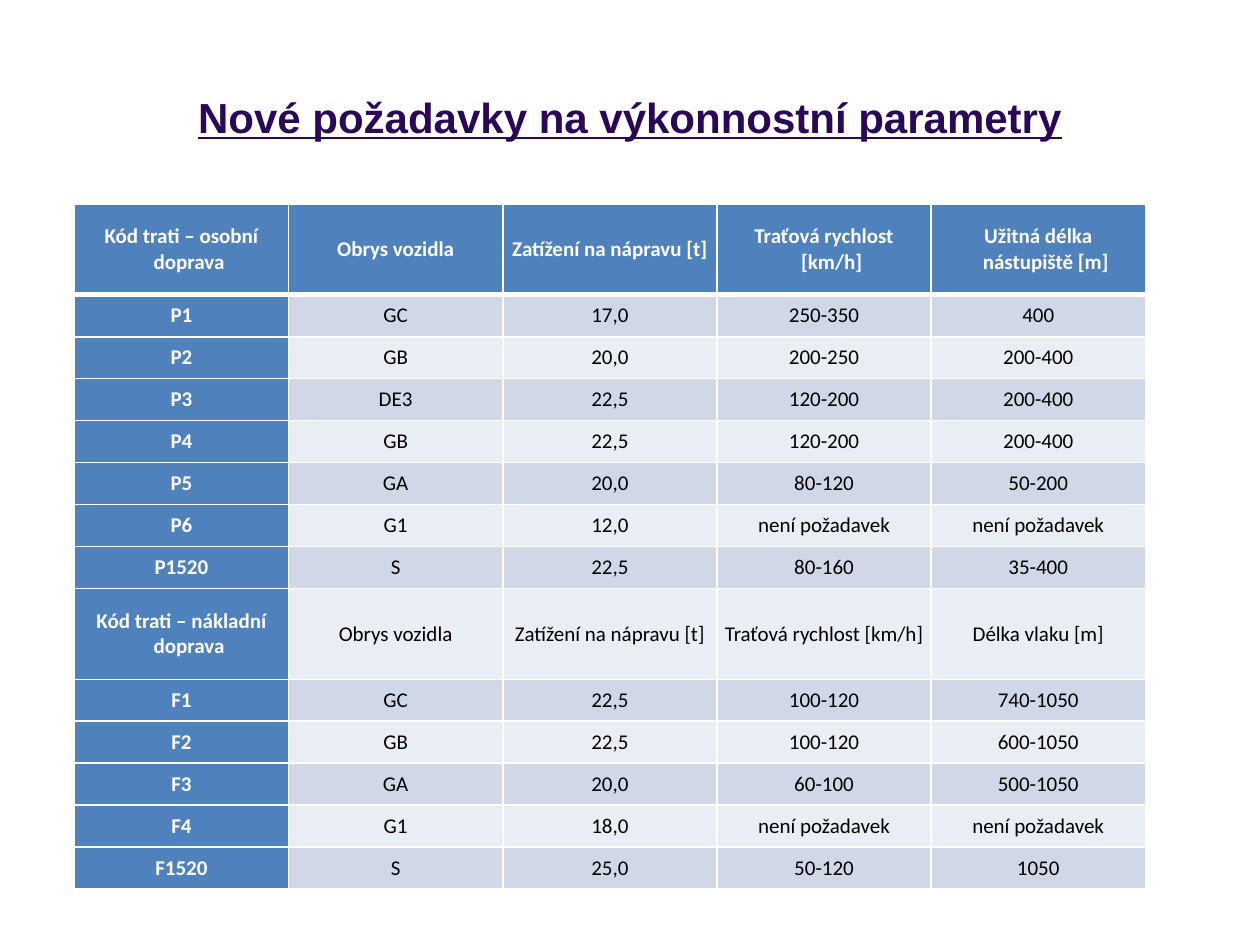
from lxml import etree
from pptx import Presentation
from pptx.dml.color import RGBColor
from pptx.enum.text import MSO_ANCHOR, PP_ALIGN
from pptx.oxml.ns import qn
from pptx.util import Inches, Pt

MID = MSO_ANCHOR.MIDDLE
CENTER = PP_ALIGN.CENTER

THEME = {
    "title": {"name": "Arial", "size": Pt(24), "bold": True, "underline": True},
    "head": {"name": "Calibri", "size": Pt(12), "bold": True},
    "body": {"name": "Calibri", "size": Pt(12), "bold": False},
    "ink": {"title": "2A0858", "head": "FFFFFF", "body": "000000"},
    "fill": {"head": "4F81BD", "odd": "D0D8E8", "even": "E9EDF4"},
    "line": "FFFFFF",
}

NONE = "není požadavek"
ROWS = [
    ("Kód trati – osobní doprava", "Obrys vozidla", "Zatížení na nápravu [t]",
     "Traťová rychlost [km/h]", "Užitná délka nástupiště [m]"),
    ("P1", "GC", "17,0", "250-350", "400"),
    ("P2", "GB", "20,0", "200-250", "200-400"),
    ("P3", "DE3", "22,5", "120-200", "200-400"),
    ("P4", "GB", "22,5", "120-200", "200-400"),
    ("P5", "GA", "20,0", "80-120", "50-200"),
    ("P6", "G1", "12,0", NONE, NONE),
    ("P1520", "S", "22,5", "80-160", "35-400"),
    ("Kód trati – nákladní doprava", "Obrys vozidla", "Zatížení na nápravu [t]",
     "Traťová rychlost [km/h]", "Délka vlaku [m]"),
    ("F1", "GC", "22,5", "100-120", "740-1050"),
    ("F2", "GB", "22,5", "100-120", "600-1050"),
    ("F3", "GA", "20,0", "60-100", "500-1050"),
    ("F4", "G1", "18,0", NONE, NONE),
    ("F1520", "S", "25,0", "50-120", "1050"),
]
TALL = (0, 8)


def write(frame, text, kind):
    para = frame.paragraphs[0]
    para.alignment = CENTER
    run = para.add_run()
    run.text = text
    for key, value in THEME[kind].items():
        setattr(run.font, key, value)
    run.font.color.rgb = RGBColor.from_string(THEME["ink"][kind])
    return para


def edge(cell, side, width):
    props = cell._tc.get_or_add_tcPr()
    line = etree.SubElement(props, qn("a:ln" + side), w=str(Pt(width)))
    fill = etree.SubElement(line, qn("a:solidFill"))
    etree.SubElement(fill, qn("a:srgbClr"), val=THEME["line"])


deck = Presentation()
deck.slide_width, deck.slide_height = Inches(10), Inches(7.5)
wide, high = deck.slide_width, deck.slide_height
slide = deck.slides.add_slide(deck.slide_layouts[6])

title = slide.shapes.add_textbox(
    int(wide * 0.05), int(high * 0.04), int(wide * 0.9), int(high / 6))
title.text_frame.word_wrap = True
title.text_frame.vertical_anchor = MID
write(title.text_frame, "Nové požadavky na výkonnostní parametry", "title")

col = int(wide * 0.17)
low, tall = int(high / 22.5), Inches(0.72)
sizes = [tall if r in TALL else low for r in range(len(ROWS))]
cols = len(ROWS[0])
table = slide.shapes.add_table(
    len(ROWS), cols, Inches(0.59), Inches(1.62), col * cols, sum(sizes)).table
table.first_row = table.first_col = table.horz_banding = True
for column in table.columns:
    column.width = col

FORMAT = {
    "vertical_anchor": MID,
    "margin_left": Inches(0.05),
    "margin_right": Inches(0.05),
    "margin_top": 0,
    "margin_bottom": 0,
}

for r, row in enumerate(ROWS):
    table.rows[r].height = sizes[r]
    for c, text in enumerate(row):
        cell = table.cell(r, c)
        for key, value in FORMAT.items():
            setattr(cell, key, value)
        for side in "LRTB":
            thick = (r, side) in ((0, "B"), (1, "T"))
            edge(cell, side, 3 if thick else 1)
        head = r == 0 or c == 0
        tone = "head" if head else "odd" if r % 2 else "even"
        cell.fill.solid()
        cell.fill.fore_color.rgb = RGBColor.from_string(THEME["fill"][tone])
        para = write(cell.text_frame, text, "head" if head else "body")
        props = para._p.get_or_add_pPr()
        props.set("marL", str(Inches(0.12)))
        props.set("indent", str(-Inches(0.12)))

deck.save("out.pptx")
